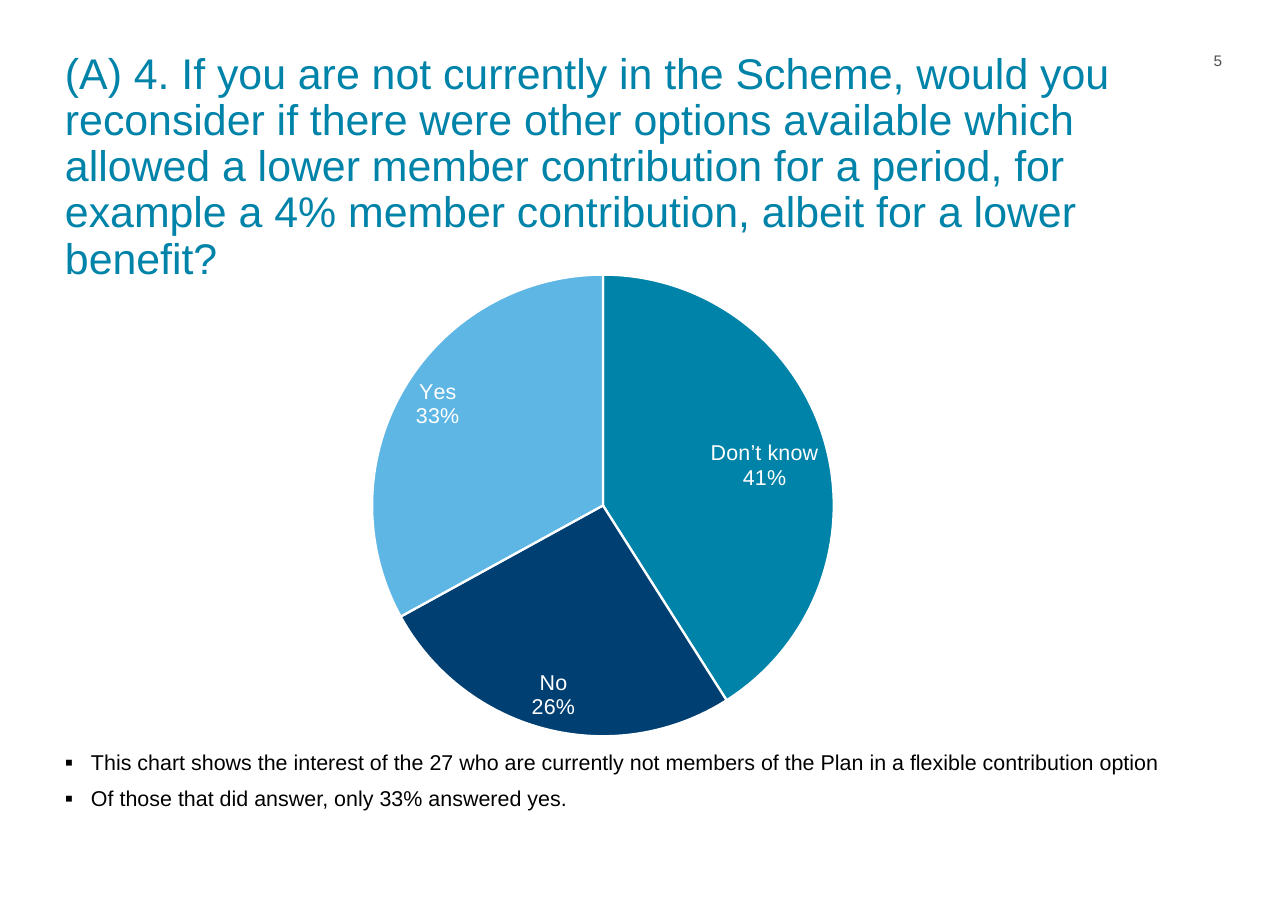
import pptx
import pptx.chart.data
import pptx.dml.color
import pptx.enum.chart
import pptx.enum.text
import pptx.oxml
import pptx.oxml.ns
import pptx.util

PX = 8298
TEAL = pptx.dml.color.RGBColor(0x00, 0x83, 0xA9)
NAVY = pptx.dml.color.RGBColor(0x00, 0x3F, 0x72)
SKY = pptx.dml.color.RGBColor(0x5E, 0xB6, 0xE4)
GREY = pptx.dml.color.RGBColor(0x4D, 0x4F, 0x53)
BLACK = pptx.dml.color.RGBColor(0, 0, 0)
WHITE = pptx.dml.color.RGBColor(0xFF, 0xFF, 0xFF)
NS = pptx.oxml.ns.nsdecls("a")
CHART_NS = pptx.oxml.ns.nsdecls("c")

TITLE = (
    "(A) 4. If you are not currently in the Scheme, would you reconsider if "
    "there were other options available which allowed a lower member "
    "contribution for a period, for example a 4% member contribution, "
    "albeit for a lower benefit?"
)
NOTES = [
    "This chart shows the interest of the 27 who are currently not members "
    "of the Plan in a flexible contribution option",
    "Of those that did answer, only 33% answered yes.",
]


def set_font(font, size, color):
    font.name = "Arial"
    font.size = pptx.util.Pt(size)
    font.color.rgb = color


def add_text(left, top, width, height, lines, size, color, spacing):
    box = page.shapes.add_textbox(left * PX, top * PX, width * PX, height * PX)
    frame = box.text_frame
    frame.word_wrap = True
    frame.margin_left = frame.margin_top = 0
    frame.margin_right = frame.margin_bottom = 0
    frame.text = "\n".join(lines)
    for para in frame.paragraphs:
        para.line_spacing = spacing
        for span in para.runs:
            set_font(span.font, size, color)
    return frame.paragraphs


deck = pptx.Presentation()
deck.slide_width = 1288 * PX
deck.slide_height = 911 * PX
page = deck.slides.add_slide(deck.slide_layouts[6])

data = pptx.chart.data.CategoryChartData()
data.categories = ["Don’t know", "No", "Yes"]
data.add_series("Series 1", [41, 26, 33])
chart = page.shapes.add_chart(
    pptx.enum.chart.XL_CHART_TYPE.PIE,
    159 * PX, 257 * PX, 888 * PX, 497 * PX, data,
).chart
chart.has_title = False
chart.has_legend = False
set_font(chart.font, 10, BLACK)

plot = chart.plots[0]
plot.vary_by_categories = True
for index, color in enumerate([TEAL, NAVY, SKY]):
    slice_format = plot.series[0].points[index].format
    slice_format.fill.solid()
    slice_format.fill.fore_color.rgb = color
    slice_format.line.color.rgb = WHITE
    slice_format.line.width = pptx.util.Pt(1.5)

plot.has_data_labels = True
labels = plot.data_labels
labels.show_value = False
labels.show_category_name = True
labels.show_percentage = True
labels.number_format = "0%"
labels.number_format_is_linked = False
labels.position = pptx.enum.chart.XL_LABEL_POSITION.BEST_FIT
set_font(labels.font, 14, WHITE)
separator = pptx.oxml.parse_xml(f"<c:separator {CHART_NS}>\n</c:separator>")
labels._element.find(pptx.oxml.ns.qn("c:showBubbleSize")).addnext(separator)

plot_area = chart._chartSpace.chart.plotArea
for old_layout in plot_area.findall(pptx.oxml.ns.qn("c:layout")):
    plot_area.remove(old_layout)
plot_area.insert(0, pptx.oxml.parse_xml(
    f'<c:layout {CHART_NS}><c:manualLayout><c:layoutTarget val="inner"/>'
    '<c:xMode val="edge"/><c:yMode val="edge"/>'
    '<c:x val="0.24"/><c:y val="0.03"/><c:w val="0.52"/><c:h val="0.94"/>'
    "</c:manualLayout></c:layout>"
))

notes = add_text(65, 748, 1142, 150, NOTES, 14, BLACK, 1.05)
for para in notes:
    properties = para._p.get_or_add_pPr()
    properties.set("marL", str(26 * PX))
    properties.set("indent", str(-26 * PX))
    for bullet in (
        f'<a:buClr {NS}><a:srgbClr val="{BLACK}"/></a:buClr>',
        f'<a:buSzPct {NS} val="110000"/>',
        f'<a:buFont {NS} typeface="Arial"/>',
        f'<a:buChar {NS} char="▪"/>',
    ):
        properties.append(pptx.oxml.parse_xml(bullet))
notes[1].space_before = pptx.util.Pt(6)

add_text(65, 52, 1142, 91, [TITLE], 28, TEAL, 0.9)
number = add_text(1179, 53, 43, 22, ["5"], 10, GREY, 0.9)
number[0].alignment = pptx.enum.text.PP_ALIGN.RIGHT

deck.save("out.pptx")
